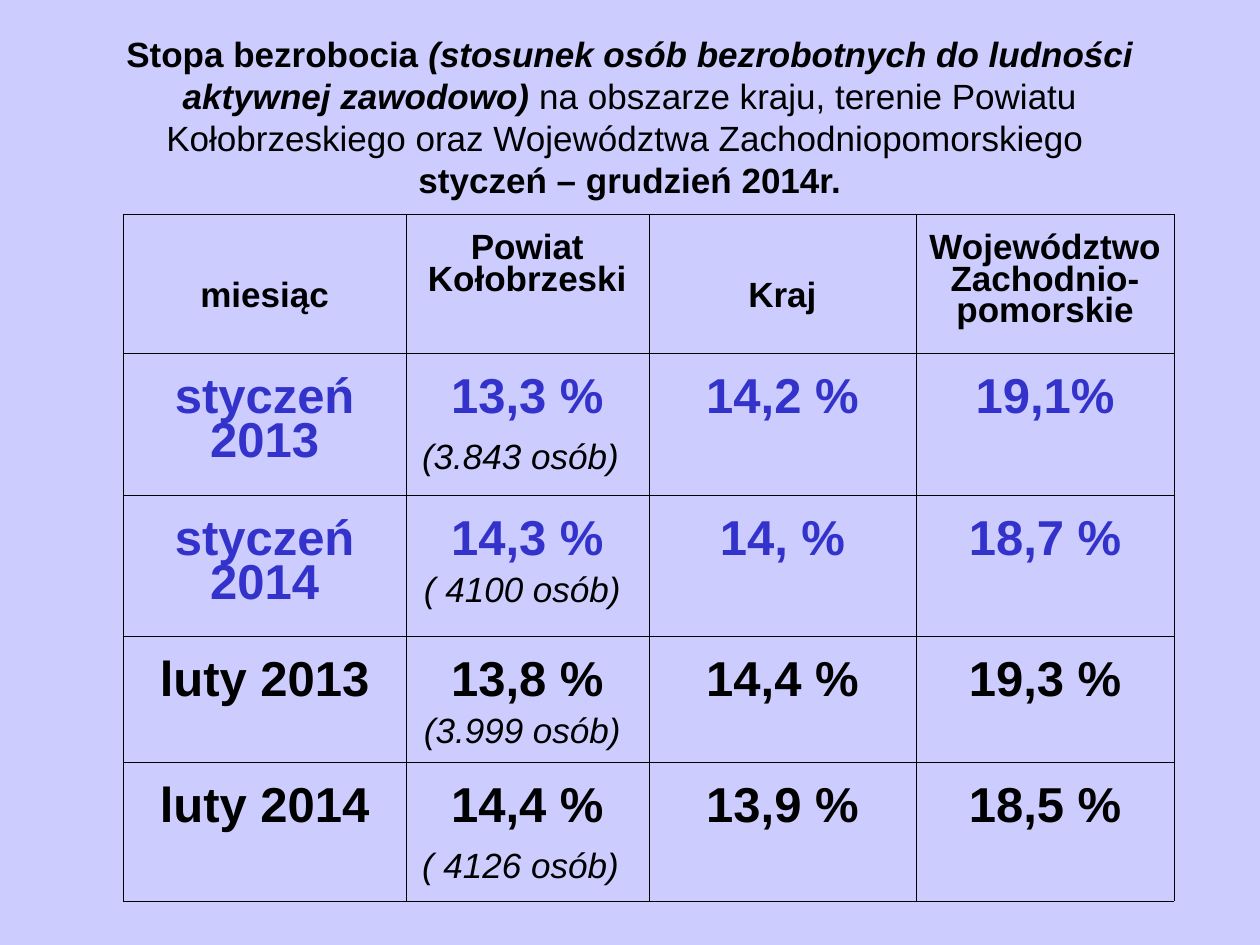
from lxml import etree
from pptx import Presentation
from pptx.dml.color import RGBColor
from pptx.enum.text import MSO_ANCHOR, PP_ALIGN
from pptx.oxml.ns import qn
from pptx.util import Inches, Pt

CENTER = PP_ALIGN.CENTER
MIDDLE = MSO_ANCHOR.MIDDLE
TOP = MSO_ANCHOR.TOP
BLACK = "000000"
BLUE = "3333CC"


def color(value):
    return RGBColor.from_string(value)


def add_run(paragraph, text, size, shade=BLACK, bold=True, italic=False):
    run = paragraph.add_run()
    run.text = text
    run.font.name = "Arial"
    run.font.size = Pt(size)
    run.font.bold = bold
    run.font.italic = italic
    run.font.color.rgb = color(shade)


prs = Presentation()
prs.slide_width = Inches(10)
prs.slide_height = Inches(7.5)
slide = prs.slides.add_slide(prs.slide_layouts[6])
slide.background.fill.solid()
slide.background.fill.fore_color.rgb = color("CCCCFF")

title = slide.shapes.add_textbox(Inches(0.5), Inches(0.3), Inches(9), Inches(1.25)).text_frame
title.word_wrap = True
title.vertical_anchor = MIDDLE
heading = title.paragraphs[0]
heading.alignment = CENTER
add_run(heading, "Stopa bezrobocia ", 20)
add_run(heading, "(stosunek osób bezrobotnych do ludności aktywnej zawodowo)", 20, italic=True)
add_run(heading, " na obszarze kraju, terenie Powiatu Kołobrzeskiego oraz "
        "Województwa Zachodniopomorskiego ", 20, bold=False)
heading.add_line_break()
add_run(heading, "styczeń – grudzień 2014r.", 20)

headers = ["miesiąc", "Powiat Kołobrzeski", "Kraj", "Województwo Zachodnio-pomorskie"]
lowered_headers = ["miesiąc", "Kraj"]
months = [
    (BLUE, ["styczeń 2013", "13,3 %", "14,2 %", "19,1%"], "(3.843 osób)", 28),
    (BLUE, ["styczeń 2014", "14,3 %", "14, %", "18,7 %"], "( 4100 osób)", 20),
    (BLACK, ["luty 2013", "13,8 %", "14,4 %", "19,3 %"], "(3.999 osób)", 20),
    (BLACK, ["luty 2014", "14,4 %", "13,9 %", "18,5 %"], "( 4126 osób)", 28),
]
column_widths = [2.24, 1.93, 2.12, 2.05]
row_heights = [1.1, 1.13, 1.12, 0.98, 1.06]

rates = slide.shapes.add_table(
    len(row_heights), len(column_widths), Inches(0.98), Inches(1.7),
    Inches(sum(column_widths)), Inches(sum(row_heights))).table
rates.first_row = False
rates.horz_banding = False
for column, width in zip(rates.columns, column_widths):
    column.width = Inches(width)
for row, height in zip(rates.rows, row_heights):
    row.height = Inches(height)

for index, label in enumerate(headers):
    cell = rates.cell(0, index)
    cell.margin_top = Inches(0.54 if label in lowered_headers else 0.16)
    add_run(cell.text_frame.paragraphs[0], label, 20)

for month, (shade, values, people, space_size) in enumerate(months, 1):
    for index, value in enumerate(values):
        cell = rates.cell(month, index)
        cell.margin_top = Inches(0.2)
        add_run(cell.text_frame.paragraphs[0], value, 28, shade)
    count = rates.cell(month, 1).text_frame.add_paragraph()
    add_run(count, people, 20, bold=False, italic=True)
    add_run(count, " ", space_size, bold=False)

last_row = len(row_heights) - 1
last_column = len(column_widths) - 1
for r, row in enumerate(rates.rows):
    for c, cell in enumerate(row.cells):
        cell.vertical_anchor = TOP
        cell.margin_left = cell.margin_right = Inches(0.1)
        cell.margin_bottom = Inches(0.05)
        for paragraph in cell.text_frame.paragraphs:
            paragraph.alignment = CENTER
            paragraph.line_spacing = 0.81
            paragraph.space_before = Pt(7 if r else 5)
        outer_edges = {"a:lnL": c == 0, "a:lnR": c == last_column,
                       "a:lnT": r == 0, "a:lnB": r == last_row}
        properties = cell._tc.get_or_add_tcPr()
        for edge, outer in outer_edges.items():
            line = etree.SubElement(properties, qn(edge), w=str(Pt(0.23 if outer else 0.11)))
            fill = etree.SubElement(line, qn("a:solidFill"))
            etree.SubElement(fill, qn("a:srgbClr"), val=BLACK)
        cell.fill.background()

prs.save("out.pptx")
